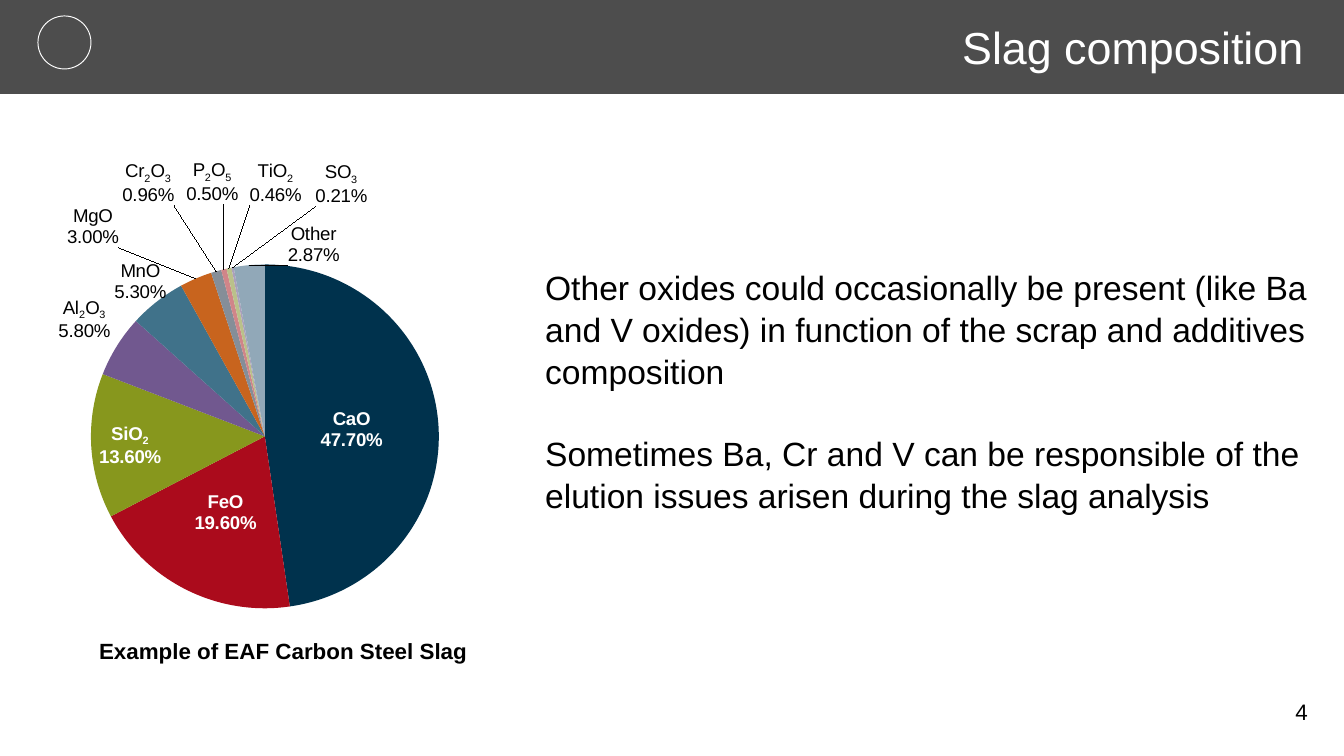
from dataclasses import dataclass
from typing import Optional

from lxml import etree
from pptx import Presentation
from pptx import util as u
from pptx.chart.data import CategoryChartData
from pptx.dml.color import RGBColor
from pptx.enum import chart as charts, shapes, text
from pptx.oxml.ns import qn

POS = charts.XL_LABEL_POSITION
CHART_X, CHART_Y, CHART_SIZE = 0, 141, 529


@dataclass(frozen=True)
class Theme:
    font: str = "Arial"
    white: str = "FFFFFF"
    black: str = "000000"
    band: str = "4D4D4D"
    title: int = 24
    body: int = 18
    caption: int = 12
    label: int = 10


@dataclass(frozen=True)
class Slice:
    name: str
    value: float
    color: str
    place: POS = POS.OUTSIDE_END
    shift: Optional[tuple[int, int]] = None

    @property
    def inside(self) -> bool:
        return self.place != POS.OUTSIDE_END


@dataclass(frozen=True)
class TextBox:
    box: tuple[int, int, int, int]
    lines: tuple[str, ...]
    size: int
    color: str
    wrap: bool = True
    align: text.PP_ALIGN = text.PP_ALIGN.LEFT
    spacing: float = 1.0
    gap: float = 0


T = Theme()

SLICES = (
    Slice("CaO", 47.7, "00324D", POS.CENTER),
    Slice("FeO", 19.6, "AB0B1C", POS.CENTER),
    Slice("SiO2", 13.6, "87971D", POS.INSIDE_END),
    Slice("Al2O3", 5.8, "71588F"),
    Slice("MnO", 5.3, "40728A", shift=(14, 7)),
    Slice("MgO", 3.0, "C8641E", shift=(-74, -24)),
    Slice("Cr2O3", 0.96, "858E98", shift=(-40, -59)),
    Slice("P2O5", 0.5, "D08589", shift=(16, -58)),
    Slice("TiO2", 0.46, "BAC18A", shift=(74, -56)),
    Slice("SO3", 0.21, "ABA0BC", shift=(136, -54)),
    Slice("Other", 2.87, "91A8B8", shift=(91, 8)),
)

TEXTS = (
    TextBox((949, 13, 372, 67), ("Slag composition",), T.title, T.white, wrap=False),
    TextBox(
        (532, 259, 812, 258),
        (
            "Other oxides could occasionally be present (like Ba and V oxides) "
            "in function of the scrap and additives composition",
            "Sometimes Ba, Cr and V can be responsible of the elution issues "
            "arisen during the slag analysis",
        ),
        T.body, T.black, spacing=1.04, gap=21.5,
    ),
    TextBox((1008, 692, 313, 40), ("4",), T.caption, T.black, align=text.PP_ALIGN.RIGHT),
)


def px(n: int) -> u.Emu:
    return u.Emu(round(n * 914400 / 134.4))


def rgb(color: str) -> RGBColor:
    return RGBColor.from_string(color)


def style(font, size: int, color: str, bold: bool = False) -> None:
    font.name, font.size, font.bold = T.font, u.Pt(size), bold
    font.color.rgb = rgb(color)


def add_text(s, item: TextBox) -> None:
    tf = s.shapes.add_textbox(*map(px, item.box)).text_frame
    tf.word_wrap = item.wrap
    for i, line in enumerate(item.lines):
        p = tf.add_paragraph() if i else tf.paragraphs[0]
        p.alignment = item.align
        p.line_spacing = item.spacing
        if i:
            p.space_before = u.Pt(item.gap)
        r = p.add_run()
        r.text = line
        style(r.font, item.size, item.color)


def add_shape(s, kind, box: tuple[int, int, int, int], fill: str = "", line: str = "") -> None:
    sp = s.shapes.add_shape(kind, *map(px, box))
    sp.shadow.inherit = False
    if fill:
        sp.fill.solid()
        sp.fill.fore_color.rgb = rgb(fill)
    else:
        sp.fill.background()
    if line:
        sp.line.color.rgb = rgb(line)
        sp.line.width = u.Pt(0.5)
    else:
        sp.line.fill.background()


def child(parent, tag: str, **attrs: str):
    return etree.SubElement(parent, qn(tag), attrs)


def manual_layout(**values: float):
    layout = etree.Element(qn("c:layout"))
    manual = child(layout, "c:manualLayout")
    if "w" in values:
        child(manual, "c:layoutTarget", val="inner")
    for axis in "xy":
        if "w" in values or "edge" in values:
            child(manual, f"c:{axis}Mode", val="edge")
    for key in "xywh":
        if key in values:
            child(manual, f"c:{key}", val=f"{values[key] / CHART_SIZE:.4f}")
    return layout


def add_label(point, item: Slice) -> None:
    label = point.data_label
    color = T.white if item.inside else T.black
    has_digits = any(ch.isdigit() for ch in item.name)
    if has_digits:
        tf = label.text_frame
        p = tf.paragraphs[0]
        for ch in item.name:
            r = p.add_run()
            r.text = ch
            style(r.font, T.label, color, item.inside)
            if ch.isdigit():
                r.font._element.set("baseline", "-25000")
        r = tf.add_paragraph().add_run()
        r.text = f"{item.value:.2f}%"
        style(r.font, T.label, color, item.inside)
    else:
        style(label.font, T.label, color, item.inside)
    label.position = item.place
    xml = label._dLbl
    dx, dy = item.shift or (0, 0)
    layout = manual_layout(x=dx, y=dy) if item.shift else etree.Element(qn("c:layout"))
    xml.insert(1, layout)
    number = etree.Element(qn("c:numFmt"), formatCode="0.00%", sourceLinked="0")
    xml.insert(3 if has_digits else 2, number)
    for tag, val in (("c:showVal", "0"), ("c:showCatName", "1"), ("c:showPercent", "1")):
        xml.find(qn(tag)).set("val", val)
    child(xml, "c:separator").text = "\n"


def add_pie(s) -> None:
    data = CategoryChartData()
    data.categories = [item.name for item in SLICES]
    data.add_series("Series 1", [item.value for item in SLICES])
    frame = s.shapes.add_chart(charts.XL_CHART_TYPE.PIE, px(CHART_X), px(CHART_Y),
                               px(CHART_SIZE), px(CHART_SIZE), data)
    chart = frame.chart
    chart.has_legend = False
    style(chart.font, T.label, T.black)
    r = chart.chart_title.text_frame.paragraphs[0].add_run()
    r.text = "Example of EAF Carbon Steel Slag"
    style(r.font, T.caption, T.black, True)
    title = chart.chart_title._element
    for old in title.findall(qn("c:layout")):
        title.remove(old)
    title.find(qn("c:tx")).addnext(manual_layout(edge=1, x=95, y=498))
    area = chart._chartSpace.chart.plotArea
    for old in area.findall(qn("c:layout")):
        area.remove(old)
    area.insert(0, manual_layout(x=91, y=125, w=348, h=348))

    series = chart.plots[0].series[0]
    labels = series.data_labels
    labels.number_format, labels.number_format_is_linked = "0.00%", False
    labels.show_value = False
    labels.show_category_name = labels.show_percentage = True
    leader = labels._element.find(qn("c:showLeaderLines"))
    if leader is None:
        leader = child(labels._element, "c:showLeaderLines")
    leader.set("val", "1")
    for i, item in enumerate(SLICES):
        point = series.points[i]
        point.format.fill.solid()
        point.format.fill.fore_color.rgb = rgb(item.color)
        point.format.line.fill.background()
        add_label(point, item)


def main() -> None:
    prs = Presentation()
    prs.slide_width, prs.slide_height = px(1344), px(756)
    s = prs.slides.add_slide(prs.slide_layouts[6])
    add_shape(s, shapes.MSO_SHAPE.RECTANGLE, (0, 0, 1344, 94), fill=T.band)
    add_shape(s, shapes.MSO_SHAPE.OVAL, (38, 16, 53, 53), line=T.white)
    add_pie(s)
    for item in TEXTS:
        add_text(s, item)
    prs.save("out.pptx")


if __name__ == "__main__":
    main()
